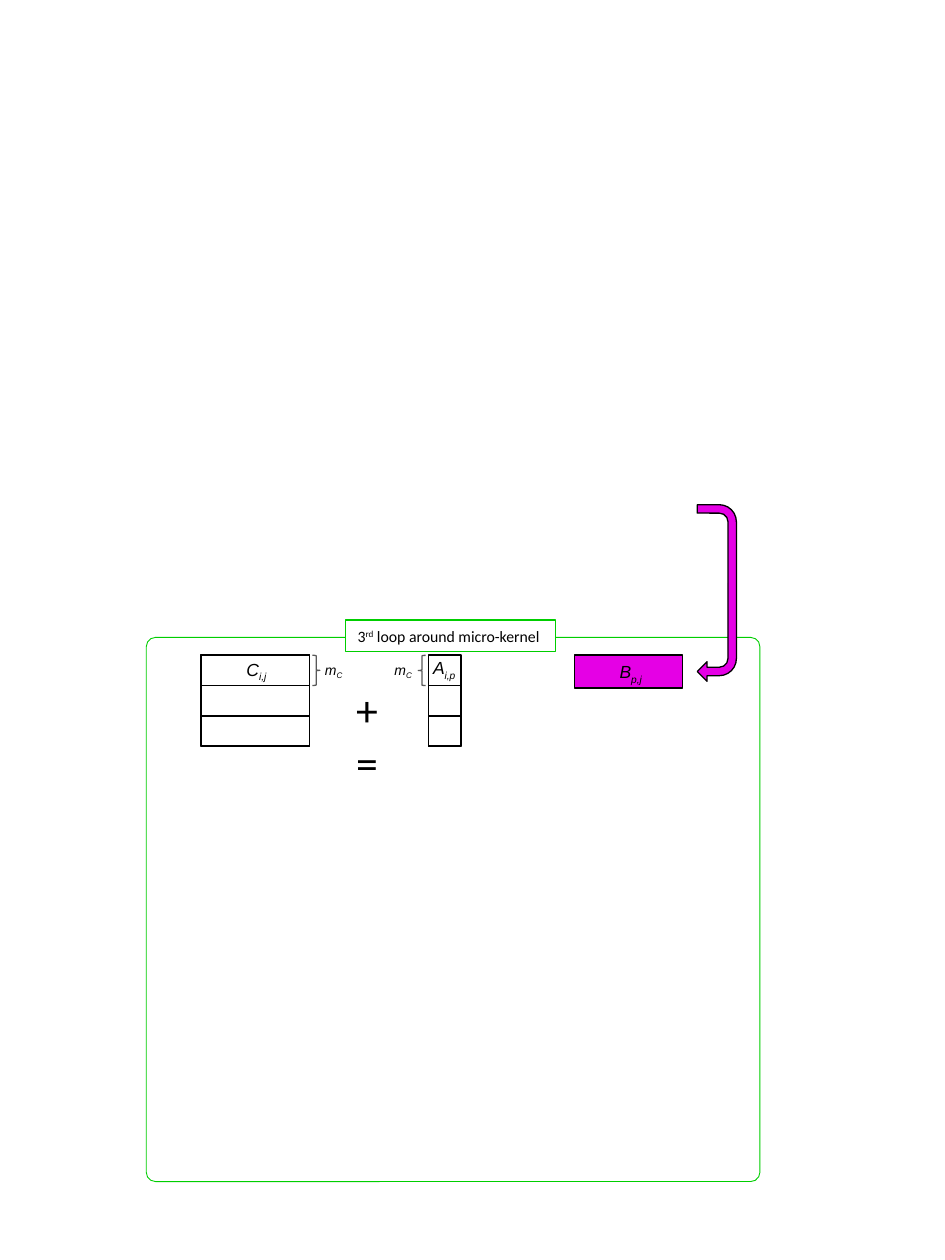
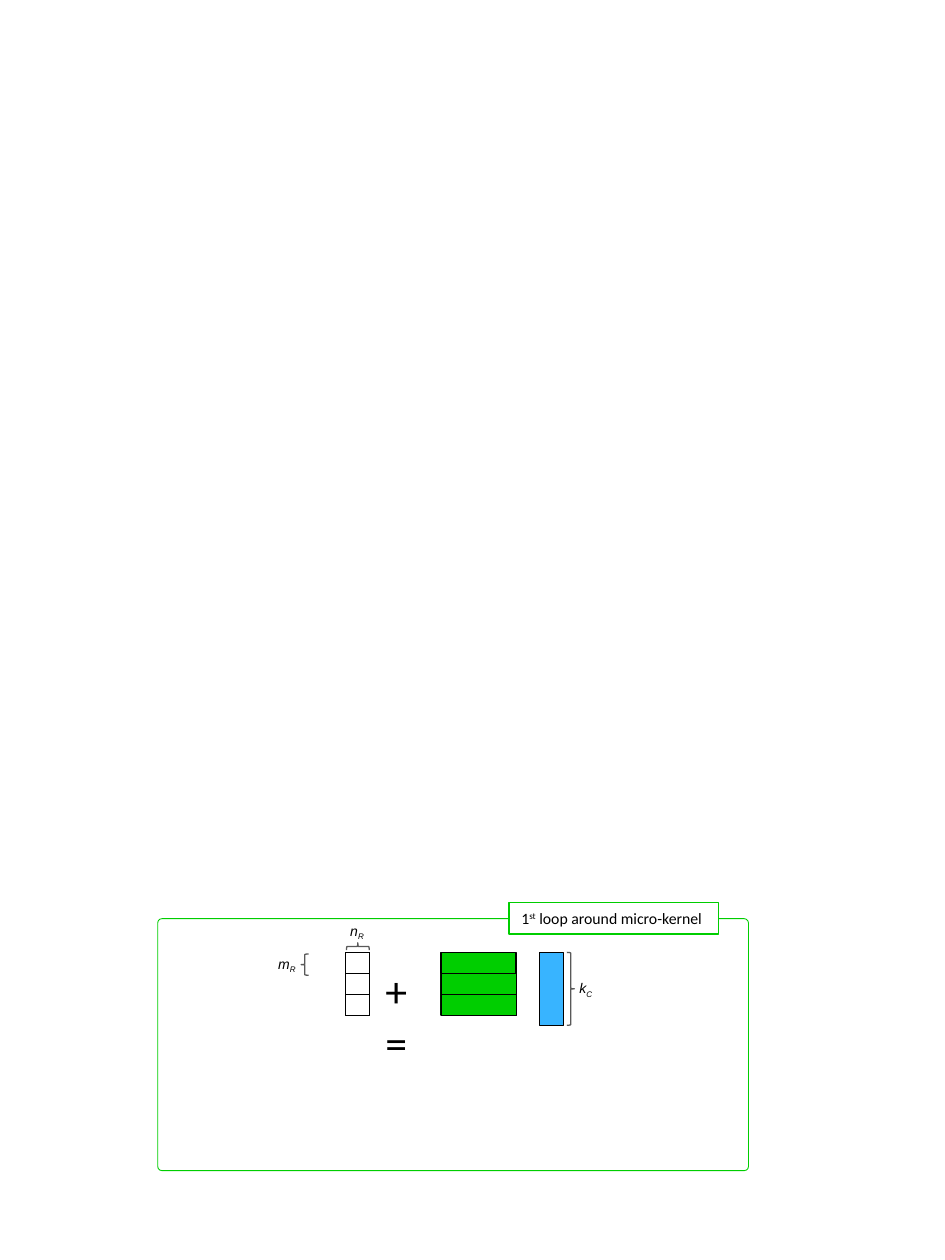
from dataclasses import dataclass

from pptx import Presentation
from pptx.dml.color import RGBColor
from pptx.enum.shapes import MSO_SHAPE
from pptx.util import Cm, Pt


@dataclass(frozen=True)
class Theme:
    black: RGBColor = RGBColor(0x00, 0x00, 0x00)
    white: RGBColor = RGBColor(0xFF, 0xFF, 0xFF)
    green: RGBColor = RGBColor(0x00, 0xCE, 0x00)
    magenta: RGBColor = RGBColor(0xE5, 0x00, 0xE5)
    blue: RGBColor = RGBColor(0x38, 0xB4, 0xFF)
    gray: RGBColor = RGBColor(0x59, 0x59, 0x59)
    title_font: str = "Calibri"
    symbol_font: str = "Arial"
    title_size: float = 9
    operator_size: float = 25
    matrix_size: float = 10
    dimension_size: float = 8
    thick: float = 1
    medium: float = 0.75
    frame: float = 0.5
    thin: float = 0.25


theme = Theme()


def add_block(slide, preset, box, fill, line, width):
    block = slide.shapes.add_shape(preset, *map(Cm, box))
    block.shadow.inherit = False
    if fill is None:
        block.fill.background()
    else:
        block.fill.solid()
        block.fill.fore_color.rgb = fill
    block.line.color.rgb = line
    block.line.width = Pt(width)
    return block


def add_text(slide, box, pieces, font, size, italic=False):
    label = slide.shapes.add_textbox(*map(Cm, box))
    label.text_frame.word_wrap = True
    paragraph = label.text_frame.paragraphs[0]
    paragraph.font.name = font
    paragraph.font.size = Pt(size)
    paragraph.font.italic = italic
    paragraph.font.color.rgb = theme.black
    for text, baseline in pieces:
        run = paragraph.add_run()
        run.text = text
        if baseline:
            run._r.get_or_add_rPr().set("baseline", str(baseline * 1000))
    return label


loops = [
    {
        "frame": (2.95, 12.85, 12.37, 10.97),
        "title": (6.96, 12.5, 4.24, 0.64),
        "ordinal": ("3", "rd"),
        "update": (6.93, 13.64),
        "panels": [
            ((4.06, 13.21, 2.18, 1.83), theme.white, theme.thick, theme.thick, (0, 1, 2)),
            ((8.64, 13.21, 0.66, 1.83), theme.white, theme.thick, theme.thick, (1, 2)),
            ((11.58, 13.21, 2.18, 0.66), theme.magenta, theme.thick, theme.thick, ()),
        ],
        "braces": [((6.3, 13.21, 0.15, 0.61), 0), ((8.43, 13.21, 0.15, 0.61), 180)],
        "symbols": [
            ((6.3, 13.21, 0.97, 0.61), "m", "C", theme.dimension_size),
            ((7.7, 13.21, 0.97, 0.61), "m", "C", theme.dimension_size),
            ((12.24, 13.21, 1.09, 0.69), "B", "p,j", theme.matrix_size),
            ((4.72, 13.16, 1.02, 0.69), "C", "i,j", theme.matrix_size),
            ((8.48, 13.13, 1.04, 0.69), "A", "i,p", theme.matrix_size),
        ],
    },
    {
        "frame": (3.18, 18.52, 11.91, 5.08),
        "title": (10.26, 18.19, 4.22, 0.64),
        "ordinal": ("1", "st"),
        "update": (7.52, 19.3),
        "panels": [
            ((8.89, 19.2, 1.52, 1.27), theme.green, theme.thick, theme.thin, (1, 2)),
            ((10.87, 19.2, 0.48, 1.47), theme.blue, theme.thin, theme.thin, ()),
            ((6.96, 19.2, 0.48, 1.27), theme.white, theme.thin, theme.thin, (0, 1, 2)),
        ],
        "braces": [
            ((6.07, 19.23, 0.15, 0.43), 180),
            ((7.14, 18.85, 0.15, 0.46), 270),
            ((11.43, 19.2, 0.15, 1.47), 0),
        ],
        "symbols": [
            ((5.36, 19.13, 0.97, 0.61), "m", "R", theme.dimension_size),
            ((6.81, 18.47, 0.81, 0.61), "n", "R", theme.dimension_size),
            ((11.43, 19.63, 0.84, 0.61), "k", "C", theme.dimension_size),
        ],
    },
]

presentation = Presentation()
presentation.slide_width = Cm(19.05)
presentation.slide_height = Cm(25.4)

for loop in loops:
    slide = presentation.slides.add_slide(presentation.slide_layouts[6])

    frame = add_block(slide, MSO_SHAPE.ROUNDED_RECTANGLE, loop["frame"], None, theme.green, theme.frame)
    frame.adjustments[0] = 0.017

    number, suffix = loop["ordinal"]
    title_pieces = [(number, 0), (suffix, 30), (" loop around micro-kernel", 0)]
    title = add_text(slide, loop["title"], title_pieces, theme.title_font, theme.title_size)
    title.fill.solid()
    title.fill.fore_color.rgb = theme.white
    title.line.color.rgb = theme.green
    title.line.width = Pt(theme.medium)

    for panel, fill, outline, divider, rows in loop["panels"]:
        add_block(slide, MSO_SHAPE.RECTANGLE, panel, fill, theme.black, outline)
        left, top, width, height = panel
        row_height = height / 3
        for row in rows:
            cell = (left, top + row * row_height, width, row_height)
            add_block(slide, MSO_SHAPE.RECTANGLE, cell, fill, theme.black, divider)

    add_text(slide, (*loop["update"], 1.14, 1.02), [("+=", 0)], theme.title_font, theme.operator_size)

    for box, angle in loop["braces"]:
        brace = add_block(slide, MSO_SHAPE.RIGHT_BRACE, box, None, theme.gray, theme.medium)
        brace.rotation = angle

    for box, letter, index, size in loop["symbols"]:
        add_text(slide, box, [(letter, 0), (index, -25)], theme.symbol_font, size, italic=True)

packing_arrow = add_block(
    presentation.slides[0], MSO_SHAPE.U_TURN_ARROW, (12.67, 11.56, 3.56, 0.79),
    theme.magenta, theme.black, theme.medium,
)
packing_arrow.rotation = 90
for position, value in enumerate((0.215, 0.25, 0.25, 0.438, 1)):
    packing_arrow.adjustments[position] = value

presentation.save("out.pptx")
